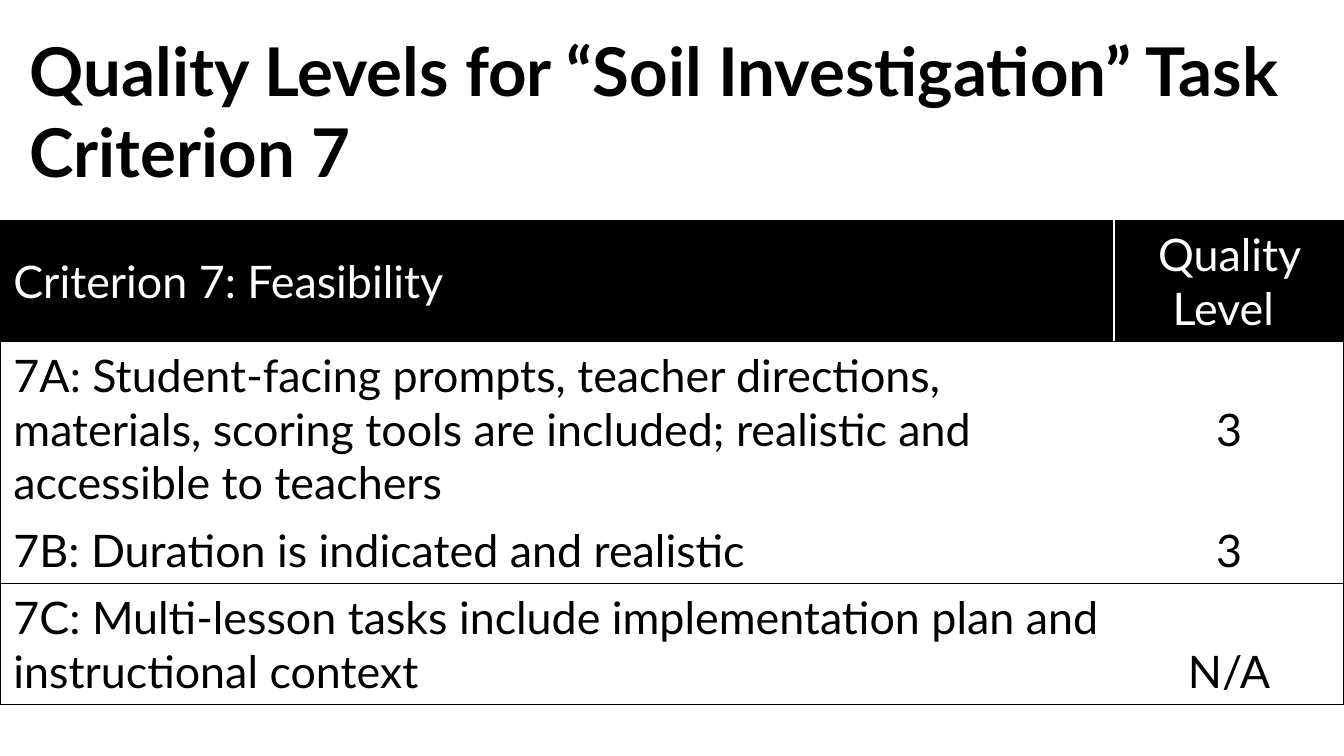
from lxml import etree
from pptx import Presentation
from pptx import util as u
from pptx.dml.color import RGBColor
from pptx.enum import text
from pptx.oxml.ns import qn

BLACK = RGBColor(0, 0, 0)
WHITE = RGBColor(255, 255, 255)
FONT = "Lato"
NO_STYLE = "{2D5ABB26-0587-4C30-8999-92F81FD0307C}"
TOP, MIDDLE, BOTTOM = (text.MSO_ANCHOR.TOP, text.MSO_ANCHOR.MIDDLE,
                       text.MSO_ANCHOR.BOTTOM)

TITLE = "Quality Levels for “Soil Investigation” Task Criterion 7"
# criterion, level, lines of text, anchor of the level, line below
ROWS = [
    ("Criterion 7: Feasibility", "Quality Level ", 2, MIDDLE, True),
    ("7A: Student-facing prompts, teacher directions, materials, scoring "
     "tools are included; realistic and accessible to teachers",
     "3", 3, MIDDLE, False),
    ("7B: Duration is indicated and realistic", "3", 1, MIDDLE, True),
    ("7C: Multi-lesson tasks include implementation plan and "
     "instructional context", "N/A", 2, BOTTOM, True),
]
COLUMNS = (8.29, 1.71)
LINE, PADDING = 0.4, 0.1  # row height = lines of text + padding


def style(p, size, color, bold=False, align=text.PP_ALIGN.LEFT):
    p.alignment = align
    f = p.font
    f.name, f.size, f.bold = FONT, u.Pt(size), bold
    f.color.rgb = color


def set_borders(cell, borders):
    """Add lines in schema order, ahead of the cell's fill."""
    tcPr = cell._tc.get_or_add_tcPr()
    sides = [side for side in "LRTB" if side in borders]
    for i, side in enumerate(sides):
        color, width = borders[side]
        ln = etree.Element(qn("a:ln" + side), w=str(u.Pt(width)))
        fill = etree.SubElement(ln, qn("a:solidFill"))
        etree.SubElement(fill, qn("a:srgbClr"), val=str(color))
        tcPr.insert(i, ln)


# Widescreen slide, 16:9
prs = Presentation()
prs.slide_width = u.Inches(10)
prs.slide_height = prs.slide_width * 9 // 16
s = prs.slides.add_slide(prs.slide_layouts[5])

# Title
title = s.shapes.title
title.left, title.top = u.Inches(0.12), u.Inches(0.01)
title.width, title.height = u.Inches(9.75), u.Inches(1.62)
tf = title.text_frame
tf.text = TITLE
tf.word_wrap = True
tf.auto_size = text.MSO_AUTO_SIZE.NONE
tf.vertical_anchor = MIDDLE
style(tf.paragraphs[0], 36, BLACK, bold=True)

# Table of criteria and levels
heights = [lines * LINE + PADDING for _, _, lines, _, _ in ROWS]
frame = s.shapes.add_table(len(ROWS), len(COLUMNS), 0, u.Inches(1.64),
                           u.Inches(sum(COLUMNS)), u.Inches(sum(heights)))
table = frame.table
table._tbl.tblPr.find(qn("a:tableStyleId")).text = NO_STYLE
table.horz_banding = False
for column, width in zip(table.columns, COLUMNS):
    column.width = u.Inches(width)

for r, (criterion, level, _, anchor, line_below) in enumerate(ROWS):
    table.rows[r].height = u.Inches(heights[r])
    header = r == 0
    for c, words in enumerate((criterion, level)):
        cell = table.cell(r, c)
        cell.text = words
        cell.vertical_anchor = anchor if c or header else TOP
        cell.fill.solid()
        cell.fill.fore_color.rgb = BLACK if header else WHITE
        style(cell.text_frame.paragraphs[0], 24, WHITE if header else BLACK,
              align=text.PP_ALIGN.CENTER if c else text.PP_ALIGN.LEFT)
        borders = {"R" if c else "L": (BLACK, 0.75)}
        if header:
            borders["T"] = (BLACK, 0.75)
            borders["L" if c else "R"] = (WHITE, 1)
        if line_below:
            borders["B"] = (BLACK, 0.75)
        set_borders(cell, borders)

prs.save("out.pptx")
